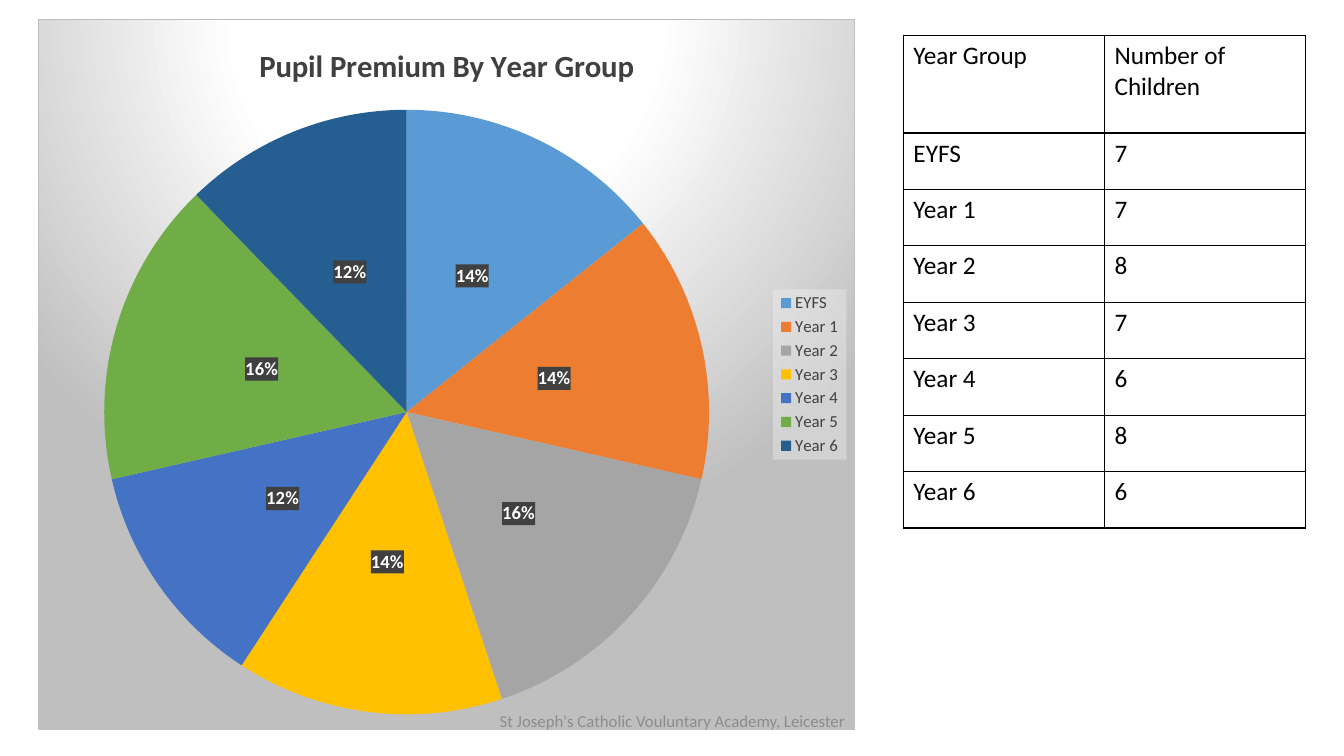
from dataclasses import dataclass

from lxml.etree import SubElement
from pptx import Presentation
from pptx.chart.data import CategoryChartData
from pptx.dml.color import RGBColor
from pptx.enum.chart import XL_CHART_TYPE, XL_LABEL_POSITION, XL_LEGEND_POSITION
from pptx.enum.text import MSO_ANCHOR, PP_ALIGN
from pptx.oxml import parse_xml
from pptx.oxml.ns import nsdecls, qn
from pptx.util import Inches, Pt

TITLE = "Pupil Premium By Year Group"
FOOTER = "St Joseph's Catholic Vouluntary Academy, Leicester"
HEADS = ("Year Group", "Number of Children")
# year group, number of children, share in the pie, slice colour
YEARS = [
    ("EYFS", 7, 14, "5B9BD5"),
    ("Year 1", 7, 14, "ED7D31"),
    ("Year 2", 8, 16, "A5A5A5"),
    ("Year 3", 7, 14, "FFC000"),
    ("Year 4", 6, 12, "4472C4"),
    ("Year 5", 8, 16, "70AD47"),
    ("Year 6", 6, 12, "255E91"),
]


@dataclass(frozen=True)
class Theme:
    face: str = "Calibri"
    ink: str = "000000"
    dark: str = "404040"
    edge: str = "BFBFBF"
    pale: str = "F2F2F2"
    white: str = "FFFFFF"
    mute: str = "8C8C8C"
    head: float = 22
    body: float = 18
    label: float = 13.3
    small: float = 12


LOOK = Theme()


def style(font, size, color, bold=False):
    font.name, font.size, font.bold = LOOK.face, Pt(size), bold
    font.color.rgb = RGBColor.from_string(color)


def write(frame, text, size=LOOK.body, color=LOOK.ink, bold=False, align=None):
    para = frame.paragraphs[0]
    para.alignment = align
    run = para.add_run()
    run.text = text
    style(run.font, size, color, bold)


def solid(color, alpha):
    return parse_xml(
        f'<c:spPr {nsdecls("c", "a")}><a:solidFill><a:srgbClr val="{color}">'
        f'<a:alpha val="{alpha * 1000}"/></a:srgbClr></a:solidFill></c:spPr>')


def glow():
    """Chart background: a round gradient centred above the chart."""
    stops = "".join(
        f'<a:gs pos="{pos * 1000}"><a:srgbClr val="{color}"/></a:gs>'
        for pos, color in ((0, LOOK.white), (39, LOOK.white), (100, LOOK.edge)))
    return parse_xml(
        f'<c:spPr {nsdecls("c", "a")}><a:gradFill><a:gsLst>{stops}</a:gsLst>'
        '<a:path path="circle"><a:fillToRect l="50000" t="-80000" r="50000" b="180000"/>'
        f'</a:path></a:gradFill><a:ln w="{Pt(0.75)}"><a:solidFill>'
        f'<a:srgbClr val="{LOOK.edge}"/></a:solidFill></a:ln></c:spPr>')


def layout(after=None, inner=False, **box):
    """Build a manual layout from fractions x, y, w and h of the chart."""
    node = parse_xml(f'<c:layout {nsdecls("c")}/>')
    manual = SubElement(node, qn("c:manualLayout"))
    if inner:
        SubElement(manual, qn("c:layoutTarget")).set("val", "inner")
    for mode in ("xMode", "yMode"):
        SubElement(manual, qn(f"c:{mode}")).set("val", "edge")
    for key, val in box.items():
        SubElement(manual, qn(f"c:{key}")).set("val", str(val))
    return node


def place(parent, node, index):
    for old in parent.findall(qn("c:layout")):
        parent.remove(old)
    parent.insert(index, node)


def add_pie(slide):
    data = CategoryChartData()
    data.categories = [year[0] for year in YEARS]
    data.add_series(TITLE, [year[2] for year in YEARS])
    chart = slide.shapes.add_chart(
        XL_CHART_TYPE.PIE, Inches(0.38), Inches(0.19),
        Inches(8.1), Inches(7.05), data).chart
    style(chart.font, 10, LOOK.ink)
    chart.has_title = True
    write(chart.chart_title.text_frame, TITLE, size=LOOK.head, color=LOOK.dark, bold=True)
    chart.chart_title.include_in_layout = False

    chart.has_legend = True
    key = chart.legend
    key.position, key.include_in_layout = XL_LEGEND_POSITION.RIGHT, False
    style(key.font, LOOK.small, LOOK.dark)
    node = key._element
    place(node, layout(x=0.9, y=0.38, w=0.09, h=0.24), 1)
    node.find(qn("c:overlay")).addnext(solid(LOOK.pale, 39))

    plot = chart.plots[0]
    plot.vary_by_categories = True
    for point, year in enumerate(YEARS):
        fill = plot.series[0].points[point].format.fill
        fill.solid()
        fill.fore_color.rgb = RGBColor.from_string(year[3])
    tags = plot.series[0].data_labels
    tags.show_percentage, tags.show_value = True, False
    tags.number_format, tags.number_format_is_linked = "0%", False
    tags.position = XL_LABEL_POSITION.CENTER
    style(tags.font, LOOK.label, LOOK.white, bold=True)
    tags._element.find(qn("c:txPr")).addprevious(solid(LOOK.dark, 90))

    root = chart._chartSpace
    area = root.find(".//" + qn("c:plotArea"))
    place(area, layout(inner=True, x=0.08, y=0.127, w=0.742, h=0.852), 0)
    root.find(qn("c:chart")).addnext(glow())


def border(cell):
    props = cell._tc.get_or_add_tcPr()
    for index, side in enumerate(("lnL", "lnR", "lnT", "lnB")):
        props.insert(index, parse_xml(
            f'<a:{side} {nsdecls("a")} w="{Pt(1)}"><a:solidFill>'
            f'<a:srgbClr val="{LOOK.ink}"/></a:solidFill></a:{side}>'))


def add_grid(slide):
    rows = [HEADS] + [year[:2] for year in YEARS]
    table = slide.shapes.add_table(
        len(rows), len(HEADS), Inches(8.96), Inches(0.35),
        Inches(3.99), Inches(4.89)).table
    table.first_row = table.horz_banding = False
    for r, row in enumerate(rows):
        table.rows[r].height = Inches(0.56 if r else 0.97)
        for c, text in enumerate(row):
            cell = table.cell(r, c)
            cell.fill.background()
            border(cell)
            write(cell.text_frame, str(text))


def add_footer(slide):
    frame = slide.shapes.add_textbox(
        Inches(4.42), Inches(6.95), Inches(4.5), Inches(0.4)).text_frame
    frame.word_wrap = True
    frame.vertical_anchor = MSO_ANCHOR.MIDDLE
    write(frame, FOOTER, size=LOOK.small, color=LOOK.mute, align=PP_ALIGN.CENTER)


def main():
    deck = Presentation()
    deck.slide_width, deck.slide_height = Inches(13.33), Inches(7.5)
    slide = deck.slides.add_slide(deck.slide_layouts[6])
    add_pie(slide)
    add_grid(slide)
    add_footer(slide)
    deck.save("out.pptx")


if __name__ == "__main__":
    main()
